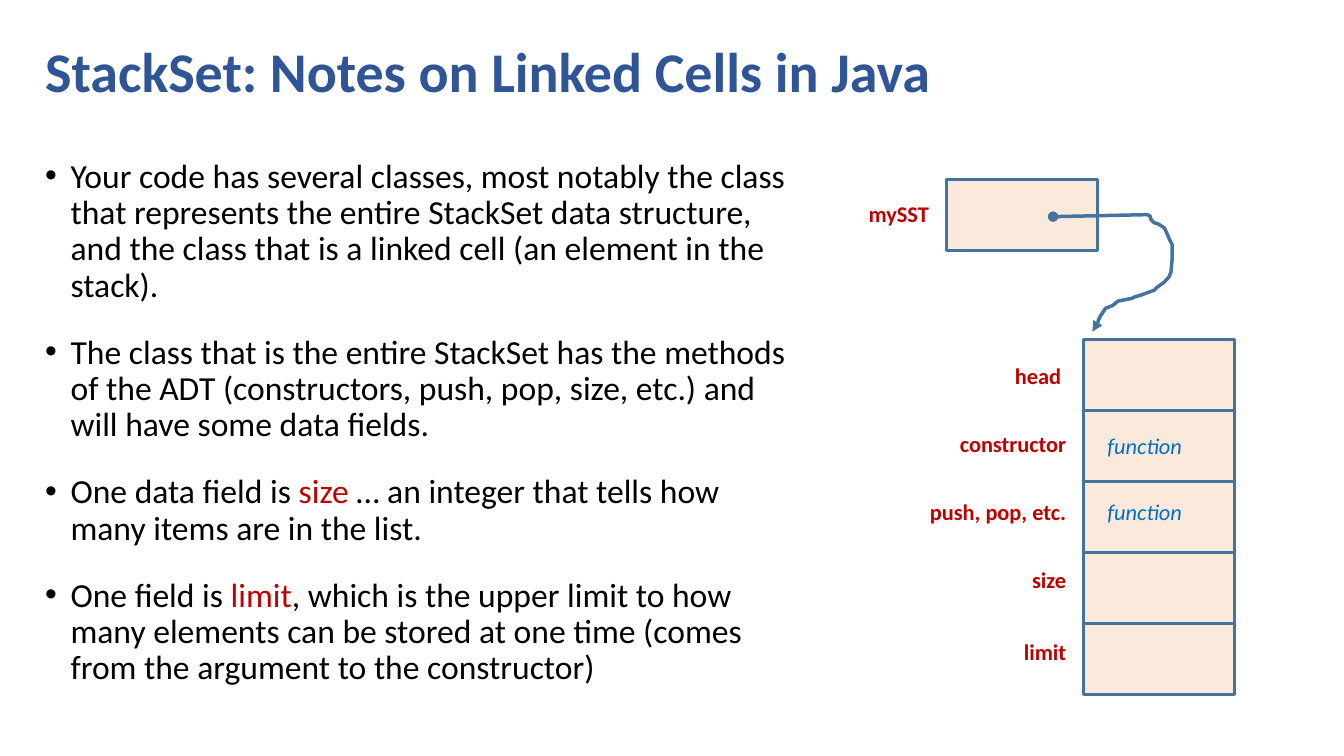
from dataclasses import dataclass

from lxml.etree import SubElement
from pptx import Presentation
from pptx.dml.color import RGBColor
from pptx.enum.shapes import MSO_SHAPE as Preset
from pptx.enum.text import MSO_ANCHOR as Anchor, PP_ALIGN as Align
from pptx.oxml.ns import qn
from pptx.util import Cm, Pt


@dataclass(frozen=True)
class Theme:
    font: str = "Calibri"
    title: str = "2F5597"
    body: str = "000000"
    accent: str = "C00000"
    function: str = "0070C0"
    cell: str = "F4B183"
    cell_opacity: int = 28
    line: str = "43739E"
    title_size: int = 40
    body_size: int = 24
    label_size: int = 16


THEME = Theme()

BULLETS = [
    [("Your code has several classes, most notably the class that represents "
      "the entire StackSet data structure, and the class that is a linked cell "
      "(an element in the stack).", THEME.body)],
    [("The class that is the entire StackSet has the methods of the ADT "
      "(constructors, push, pop, size, etc.) and will have some data fields.", THEME.body)],
    [("One data field is ", THEME.body), ("size ", THEME.accent),
     ("… an integer that tells how many items are in the list.", THEME.body)],
    [("One field is ", THEME.body), ("limit", THEME.accent),
     (", which is the upper limit to how many elements can be stored at one time "
      "(comes from the argument to the constructor)", THEME.body)],
]

CELL_WIDTH, CELL_HEIGHT = 3.81, 1.79
RECORD_LEFT, RECORD_TOP = 27.31, 8.56
LABEL_RIGHT, LABEL_WIDTH, LABEL_HEIGHT = 27.12, 4.2, 1.3
FIELDS = [("head ", 8.99), ("constructor", 10.72), ("push, pop, etc.", 12.42),
          ("size", 14.15), ("limit", 15.95)]
FUNCTION_TOPS = [10.77, 12.42]

POINTER = [
    (26.54, 5.46), (28.91, 5.41), (28.98, 5.44), (29.01, 5.54), (29.08, 5.61),
    (29.18, 5.64), (29.34, 5.74), (29.4, 5.86), (29.49, 6.07), (29.54, 6.17),
    (29.54, 6.52), (29.51, 6.86), (29.46, 6.98), (29.34, 7.11), (29.16, 7.24),
    (29.08, 7.32), (29.01, 7.34), (28.8, 7.42), (28.58, 7.49), (28.52, 7.52),
    (28.17, 7.59), (28.04, 7.7), (27.86, 7.77), (27.74, 7.95), (27.69, 8.05),
    (27.66, 8.15), (27.61, 8.23), (27.53, 8.36),
]


def add_run(paragraph, text, size, color, bold=False, italic=False):
    run = paragraph.add_run()
    run.text = text
    font = run.font
    font.name = THEME.font
    font.size = Pt(size)
    font.bold = bold
    font.italic = italic
    font.color.rgb = RGBColor.from_string(color)


def add_frame(slide, left, top, width, height):
    shape = slide.shapes.add_textbox(Cm(left), Cm(top), Cm(width), Cm(height))
    shape.text_frame.word_wrap = True
    return shape.text_frame


def add_title(slide, text):
    frame = add_frame(slide, 0.89, 0.03, 31.93, 3.68)
    frame.vertical_anchor = Anchor.MIDDLE
    paragraph = frame.paragraphs[0]
    paragraph.line_spacing = 0.9
    add_run(paragraph, text, THEME.title_size, THEME.title, bold=True)


def set_bullet(paragraph):
    properties = paragraph._p.get_or_add_pPr()
    properties.set("marL", str(Cm(0.64)))
    properties.set("indent", str(Cm(-0.64)))
    SubElement(properties, qn("a:buFont"), typeface="Arial")
    SubElement(properties, qn("a:buChar"), char="•")


def add_bullets(slide, bullets):
    frame = add_frame(slide, 0.89, 3.89, 19.25, 14.22)
    for index, runs in enumerate(bullets):
        paragraph = frame.add_paragraph() if index else frame.paragraphs[0]
        set_bullet(paragraph)
        paragraph.line_spacing = 0.9
        paragraph.space_before = Pt(10 if index else 0)
        paragraph.space_after = Pt(12)
        for text, color in runs:
            add_run(paragraph, text, THEME.body_size, color)


def add_label(slide, text, left, top, width, align=Align.LEFT):
    paragraph = add_frame(slide, left, top, width, LABEL_HEIGHT).paragraphs[0]
    paragraph.alignment = align
    add_run(paragraph, text, THEME.label_size, THEME.accent, bold=True)


def add_function(slide, top):
    paragraph = add_frame(slide, 27.66, top, 2.87, LABEL_HEIGHT).paragraphs[0]
    add_run(paragraph, "function", THEME.label_size, THEME.function, italic=True)


def set_line(shape, width):
    shape.shadow.inherit = False
    shape.line.color.rgb = RGBColor.from_string(THEME.line)
    shape.line.width = Pt(width)


def add_cell(slide, left, top):
    shape = slide.shapes.add_shape(
        Preset.RECTANGLE, Cm(left), Cm(top), Cm(CELL_WIDTH), Cm(CELL_HEIGHT))
    shape.fill.solid()
    shape.fill.fore_color.rgb = RGBColor.from_string(THEME.cell)
    color = shape.fill._xPr.find(qn("a:solidFill"))[0]
    SubElement(color, qn("a:alpha"), val=str(THEME.cell_opacity * 1000))
    set_line(shape, 2)


def add_pointer(slide, points):
    start, *rest = [(Cm(x), Cm(y)) for x, y in points]
    builder = slide.shapes.build_freeform(*start)
    builder.add_line_segments(rest, close=False)
    shape = builder.convert_to_shape()
    shape.fill.background()
    set_line(shape, 2.5)
    line = shape.line._get_or_add_ln()
    SubElement(line, qn("a:headEnd"), type="oval")
    SubElement(line, qn("a:tailEnd"), type="triangle")


def main():
    presentation = Presentation()
    presentation.slide_width = Cm(33.87)
    presentation.slide_height = Cm(19.05)
    slide = presentation.slides.add_slide(presentation.slide_layouts[6])

    add_title(slide, "StackSet: Notes on Linked Cells in Java")
    add_bullets(slide, BULLETS)

    add_label(slide, "mySST", 21.64, 4.93, 2.2)
    add_cell(slide, 23.85, 4.52)
    for row, (name, top) in enumerate(FIELDS):
        add_cell(slide, RECORD_LEFT, RECORD_TOP + row * CELL_HEIGHT)
        add_label(slide, name, LABEL_RIGHT - LABEL_WIDTH, top, LABEL_WIDTH, Align.RIGHT)
    for top in FUNCTION_TOPS:
        add_function(slide, top)
    add_pointer(slide, POINTER)

    presentation.save("out.pptx")


if __name__ == "__main__":
    main()
